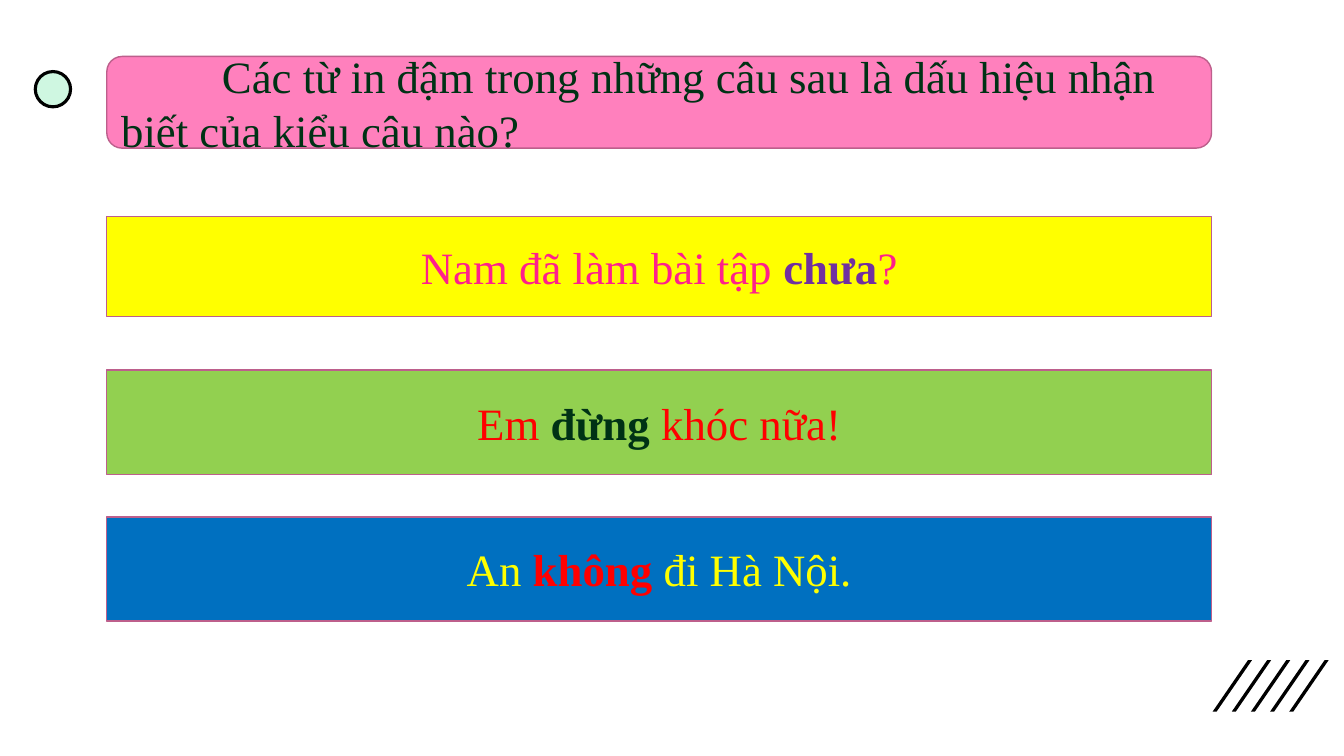
from dataclasses import dataclass

from pptx import Presentation
from pptx.dml.color import RGBColor
from pptx.enum import shapes as sh, text as tx
from pptx.util import Pt


@dataclass(frozen=True)
class Theme:
    font: str = "Times New Roman"
    size: float = 32
    ink: str = "003215"
    black: str = "000000"
    mint: str = "CFF7E1"
    pink: str = "FF80BD"
    edge: str = "BD5F8C"
    rose: str = "FF208B"
    plum: str = "7030A0"
    red: str = "FF0000"
    gold: str = "FFFF00"
    green: str = "92D050"
    blue: str = "0070C0"


@dataclass(frozen=True)
class Piece:
    words: str
    color: str
    bold: bool = False


@dataclass(frozen=True)
class Bar:
    top: float
    high: float
    fill: str
    pieces: tuple[Piece, ...]
    kind: int = sh.MSO_SHAPE.RECTANGLE
    align: int = tx.PP_ALIGN.CENTER
    indent: float = 0


T = Theme()
LEFT, WIDE = 76.32, 789.12

BARS = (
    # Question
    Bar(40.32, 65.52, T.pink,
        (Piece("Các từ in đậm trong những câu sau là dấu hiệu nhận biết "
               "của kiểu câu nào?", T.ink),),
        sh.MSO_SHAPE.ROUNDED_RECTANGLE, tx.PP_ALIGN.LEFT, 72),
    # Example sentences
    Bar(154.8, 71.28, T.gold,
        (Piece("Nam đã làm bài tập ", T.rose), Piece("chưa", T.plum, True),
         Piece("?", T.rose))),
    Bar(264.24, 74.88, T.green,
        (Piece("Em ", T.red), Piece("đừng ", T.ink, True),
         Piece("khóc nữa!", T.red))),
    Bar(369.36, 74.16, T.blue,
        (Piece("An ", T.gold), Piece("không ", T.red, True),
         Piece("đi Hà Nội.", T.gold))),
)


def paint(shape, fill: str, edge: str | None = None, width: float = 1) -> None:
    shape.shadow.inherit = False
    shape.fill.solid()
    shape.fill.fore_color.rgb = RGBColor.from_string(fill)
    if edge is None:
        shape.line.fill.background()
    else:
        shape.line.color.rgb = RGBColor.from_string(edge)
        shape.line.width = Pt(width)


def draw_bar(slide, bar: Bar) -> None:
    box = slide.shapes.add_shape(
        bar.kind, Pt(LEFT), Pt(bar.top), Pt(WIDE), Pt(bar.high))
    paint(box, bar.fill, T.edge)
    frame = box.text_frame
    frame.word_wrap = True
    frame.vertical_anchor = tx.MSO_ANCHOR.MIDDLE
    para = frame.paragraphs[0]
    para.alignment = bar.align
    if bar.indent:
        props = para._p.get_or_add_pPr()
        props.set("marL", "0")
        props.set("indent", str(Pt(bar.indent)))
    for piece in bar.pieces:
        run = para.add_run()
        run.text = piece.words
        run.font.name = T.font
        run.font.size = Pt(T.size)
        run.font.bold = piece.bold
        run.font.color.rgb = RGBColor.from_string(piece.color)


def draw_stripe(slide, left: float) -> None:
    top, base, lean, thick = 471.6, 508.32, 25.2, 2.88
    pen = slide.shapes.build_freeform(Pt(left + thick), Pt(base))
    pen.add_line_segments(
        [(Pt(left), Pt(base)), (Pt(left + lean), Pt(top)),
         (Pt(left + lean + thick), Pt(top))], close=True)
    paint(pen.convert_to_shape(), T.black)


def main() -> None:
    deck = Presentation()
    deck.slide_width, deck.slide_height = Pt(960), Pt(540)
    slide = deck.slides.add_slide(deck.slide_layouts[6])

    # Corner stripes
    for step in range(5):
        draw_stripe(slide, 866.16 + 13.68 * step)

    # Marker dot
    dot = slide.shapes.add_shape(
        sh.MSO_SHAPE.OVAL, Pt(25.2), Pt(51.12), Pt(25.2), Pt(25.2))
    paint(dot, T.mint, T.black, 2.25)

    # Question and sentences
    for bar in BARS:
        draw_bar(slide, bar)

    deck.save("out.pptx")


if __name__ == "__main__":
    main()
